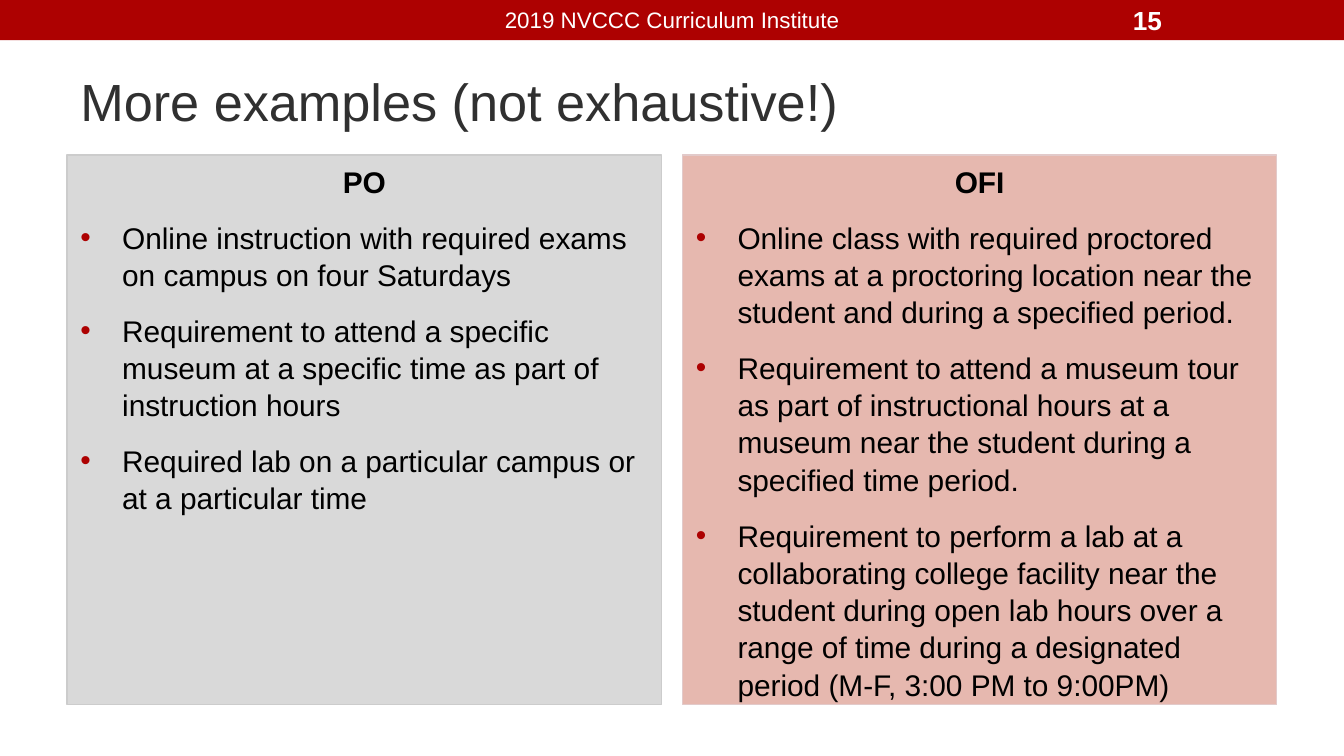
import pptx
import pptx.util
import pptx.dml.color
import pptx.enum.shapes
import pptx.enum.text
import pptx.oxml
import pptx.oxml.ns

Cm, Pt = pptx.util.Cm, pptx.util.Pt
ALIGN = pptx.enum.text.PP_ALIGN
ANCHOR = pptx.enum.text.MSO_ANCHOR

HUES = {"red": "AD0101", "white": "FFFFFF", "ink": "303030", "black": "000000",
        "gray": "D9D9D9", "rim": "CCCCCC", "pink": "E6B8AF", "blush": "E2CACA"}

LABELS = [
    ("2019 NVCCC Curriculum Institute", (6.99, 0.03, 11.43, 0.69), "white",
     {"size": Pt(12)}, ALIGN.CENTER),
    ("More examples (not exhaustive!)", (1.27, 1.12, 22.86, 1.57), "ink",
     {"size": Pt(28)}, ALIGN.LEFT),
    ("15", (21.16, 0.03, 2.97, 0.69), "white",
     {"size": Pt(14), "bold": True}, ALIGN.LEFT),
]

PANELS = [
    ("PO", "gray", "rim", [
        "Online instruction with required exams on campus on four Saturdays",
        "Requirement to attend a specific museum at a specific time as part of instruction hours",
        "Required lab on a particular campus or at a particular time"]),
    ("OFI", "pink", "blush", [
        "Online class with required proctored exams at a proctoring location near the student "
        "and during a specified period.",
        "Requirement to attend a museum tour as part of instructional hours at a museum near "
        "the student during a specified time period.",
        "Requirement to perform a lab at a collaborating college facility near the student "
        "during open lab hours over a range of time during a designated period "
        "(M-F, 3:00 PM to 9:00PM)"]),
]

WIDE, HIGH = 25.4, 14.29
EDGE, GAP, TOP, TALL = 1.27, 0.4, 2.93, 10.39
PANEL = (WIDE - 2 * EDGE - GAP) / 2

FRAME = {"word_wrap": True, "margin_left": Cm(0.25), "margin_right": Cm(0.25),
         "margin_top": Cm(0.13), "margin_bottom": Cm(0.13)}
HEAD = {"alignment": ALIGN.CENTER, "space_before": Pt(5.6), "line_spacing": 1.04}
ITEM = {"alignment": ALIGN.LEFT, "space_before": Pt(10), "line_spacing": 1.04}


def apply(thing, style):
    for key, val in style.items():
        setattr(thing, key, val)


def hue(name):
    return pptx.dml.color.RGBColor.from_string(HUES[name])


def write(para, text, color, font, style):
    run = para.add_run()
    run.text = text
    apply(run.font, {"name": "Arial", **font})
    run.font.color.rgb = hue(color)
    apply(para, style)


def bullet(para):
    props = para._p.get_or_add_pPr()
    props.set("marL", str(Cm(0.79)))
    props.set("indent", str(Cm(-0.91)))
    space = pptx.oxml.ns.nsdecls("a")
    for xml in (f'<a:buClr {space}><a:srgbClr val="{HUES["red"]}"/></a:buClr>',
                f'<a:buFont {space} typeface="Arial"/>',
                f'<a:buChar {space} char="•"/>'):
        props.append(pptx.oxml.parse_xml(xml))


def block(slide, box, fill, rim=None):
    kind = pptx.enum.shapes.MSO_SHAPE.RECTANGLE
    shape = slide.shapes.add_shape(kind, *map(Cm, box))
    shape.shadow.inherit = False
    shape.fill.solid()
    shape.fill.fore_color.rgb = hue(fill)
    if rim:
        shape.line.color.rgb = hue(rim)
        shape.line.width = Pt(0.75)
    else:
        shape.line.fill.background()
    return shape


def label(slide, text, box, color, font, align):
    frame = slide.shapes.add_textbox(*map(Cm, box)).text_frame
    apply(frame, {**FRAME, "vertical_anchor": ANCHOR.MIDDLE})
    write(frame.paragraphs[0], text, color, font, {"alignment": align})


def panel(slide, left, head, fill, rim, items):
    frame = block(slide, (left, TOP, PANEL, TALL), fill, rim).text_frame
    apply(frame, {**FRAME, "vertical_anchor": ANCHOR.TOP})
    write(frame.paragraphs[0], head, "black", {"size": Pt(16), "bold": True}, HEAD)
    for text in items:
        para = frame.add_paragraph()
        write(para, text, "black", {"size": Pt(16), "bold": False}, ITEM)
        bullet(para)


def main():
    deck = pptx.Presentation()
    apply(deck, {"slide_width": Cm(WIDE), "slide_height": Cm(HIGH)})
    slide = deck.slides.add_slide(deck.slide_layouts[6])
    block(slide, (0, 0, WIDE, 0.76), "red")
    for row in LABELS:
        label(slide, *row)
    for num, row in enumerate(PANELS):
        panel(slide, EDGE + num * (PANEL + GAP), *row)
    deck.save("out.pptx")


if __name__ == "__main__":
    main()
